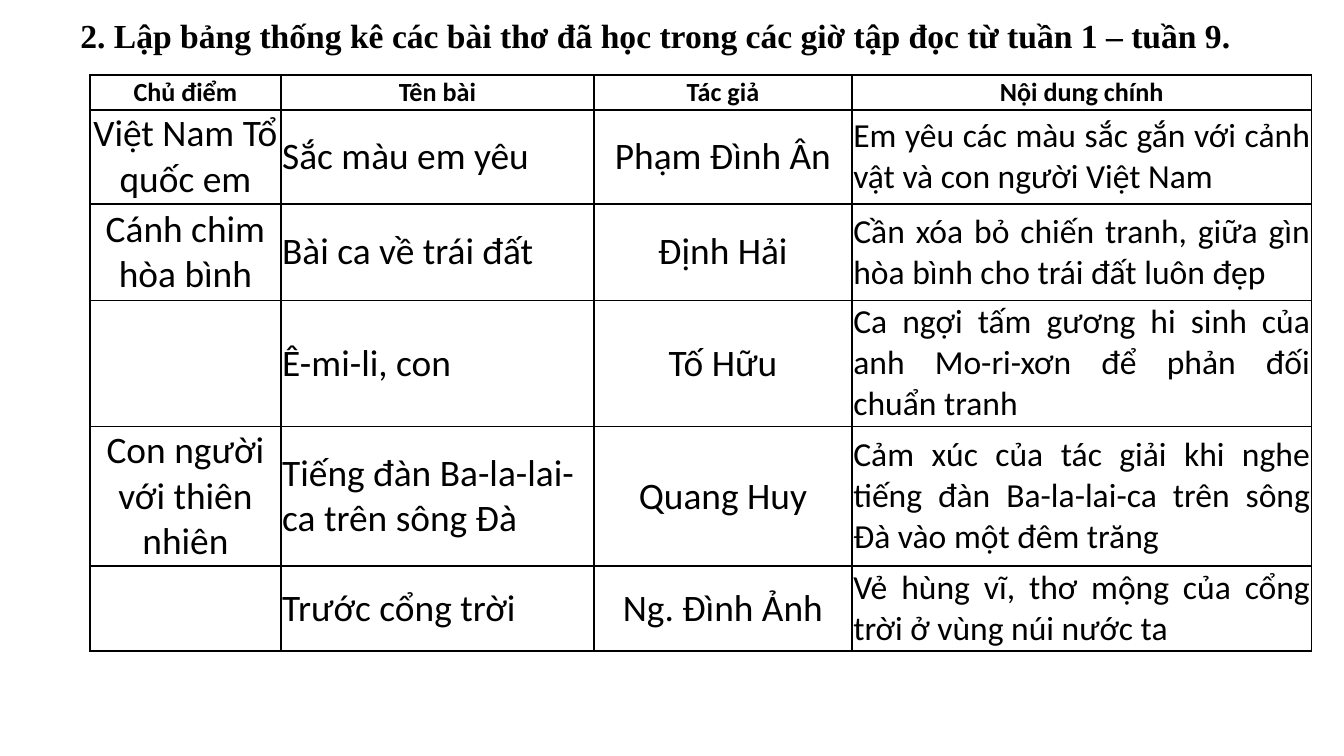
"""Build a slide with a table of the poems studied in weeks 1 to 9."""
from lxml import etree
from pptx import Presentation
from pptx.dml.color import RGBColor
from pptx.enum.text import MSO_ANCHOR, MSO_AUTO_SIZE, PP_ALIGN
from pptx.oxml.ns import qn
from pptx.util import Inches, Pt

LEFT, CENTER, JUSTIFY = PP_ALIGN.LEFT, PP_ALIGN.CENTER, PP_ALIGN.JUSTIFY
MIDDLE = MSO_ANCHOR.MIDDLE
GROW = MSO_AUTO_SIZE.SHAPE_TO_FIT_TEXT

COLORS = {"ink": "000000", "paper": "FFFFFF"}
TITLE = "2. Lập bảng thống kê các bài thơ đã học trong các giờ tập đọc từ tuần 1 – tuần 9."
HEADERS = ("Chủ điểm", "Tên bài", "Tác giả", "Nội dung chính")
POEMS = [
    ("Việt Nam Tổ quốc em", "Sắc màu em yêu", "Phạm Đình Ân",
     "Em yêu các màu sắc gắn với cảnh vật và con người Việt Nam"),
    ("Cánh chim hòa bình", "Bài ca về trái đất", "Định Hải",
     "Cần xóa bỏ chiến tranh, giữa gìn hòa bình cho trái đất luôn đẹp"),
    ("", "Ê-mi-li, con", "Tố Hữu",
     "Ca ngợi tấm gương hi sinh của anh Mo-ri-xơn để phản đối chuẩn tranh"),
    ("Con người với thiên nhiên", "Tiếng đàn Ba-la-lai-ca trên sông Đà", "Quang Huy",
     "Cảm xúc của tác giải khi nghe tiếng đàn Ba-la-lai-ca trên sông Đà vào một đêm trăng"),
    ("", "Trước cổng trời", "Ng. Đình Ảnh",
     "Vẻ hùng vĩ, thơ mộng của cổng trời ở vùng núi nước ta"),
]
COLUMN_WIDTHS = (1.42, 2.33, 1.92, 3.42)
ROW_HEIGHTS = (0.2, 0.63, 0.72, 0.81, 0.81, 0.55)
BODY_STYLES = ((20, CENTER), (20, LEFT), (20, CENTER), (18, JUSTIFY))
HEADER_STYLES = ((14, CENTER),) * len(HEADERS)


def format_text(text_frame, text, font_name, size, bold, alignment):
    text_frame.text = text
    paragraph = text_frame.paragraphs[0]
    paragraph.alignment = alignment
    for run in paragraph.runs:
        run.font.name = font_name
        run.font.size = Pt(size)
        run.font.bold = bold
        run.font.color.rgb = RGBColor.from_string(COLORS["ink"])


def add_borders(cell):
    properties = cell._tc.get_or_add_tcPr()
    for position, side in enumerate(("lnL", "lnR", "lnT", "lnB")):
        line = etree.Element(qn(f"a:{side}"), w=str(Pt(1)))
        fill = etree.SubElement(line, qn("a:solidFill"))
        etree.SubElement(fill, qn("a:srgbClr"), val=COLORS["ink"])
        properties.insert(position, line)


def fill_cell(cell, text, size, bold, alignment):
    cell.fill.solid()
    cell.fill.fore_color.rgb = RGBColor.from_string(COLORS["paper"])
    add_borders(cell)
    if text:
        cell.vertical_anchor = MIDDLE
        cell.margin_left = cell.margin_right = Inches(0.01)
        cell.margin_top = cell.margin_bottom = Inches(0.01)
        format_text(cell.text_frame, text, "Calibri", size, bold, alignment)


def add_poem_table(slide):
    rows = [HEADERS, *POEMS]
    frame = slide.shapes.add_table(len(rows), len(HEADERS), Inches(0.67), Inches(0.56),
                                   Inches(9.08), Inches(4.68))
    table = frame.table
    table.horz_banding = False
    for column, width in zip(table.columns, COLUMN_WIDTHS):
        column.width = Inches(width)
    for row, height in zip(table.rows, ROW_HEIGHTS):
        row.height = Inches(height)
    frame.width, frame.height = Inches(9.08), Inches(4.68)
    for row_index, texts in enumerate(rows):
        is_header = row_index == 0
        styles = HEADER_STYLES if is_header else BODY_STYLES
        for column_index, (text, (size, alignment)) in enumerate(zip(texts, styles)):
            fill_cell(table.cell(row_index, column_index), text, size, is_header, alignment)


def add_title(slide):
    title = slide.shapes.add_textbox(Inches(0.5), Inches(0.06), Inches(8.92), Inches(0.4))
    title.text_frame.word_wrap = True
    title.text_frame.auto_size = GROW
    format_text(title.text_frame, TITLE, "Times New Roman", 18, True, LEFT)


def main():
    presentation = Presentation()
    presentation.slide_width = Inches(10)
    presentation.slide_height = Inches(10) * 9 // 16
    slide = presentation.slides.add_slide(presentation.slide_layouts[6])
    add_poem_table(slide)
    add_title(slide)
    presentation.save("out.pptx")


if __name__ == "__main__":
    main()
